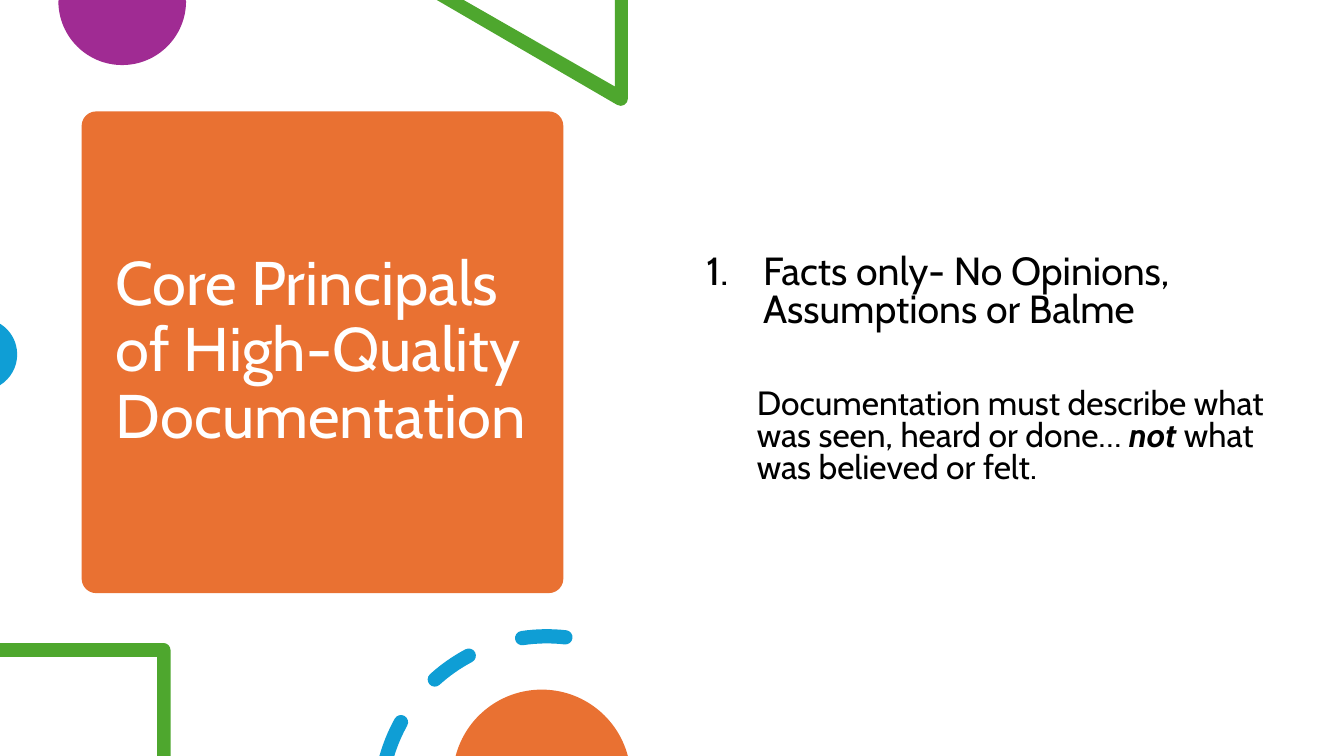
from dataclasses import dataclass
from math import ceil, cos, radians, sin, tan

from lxml import etree
from pptx import Presentation
from pptx.dml.color import RGBColor
from pptx.enum.shapes import MSO_SHAPE
from pptx.enum.text import MSO_ANCHOR
from pptx.oxml.ns import qn
from pptx.util import Inches, Pt

ROUNDED = MSO_SHAPE.ROUNDED_RECTANGLE
MIDDLE = MSO_ANCHOR.MIDDLE
TOP = MSO_ANCHOR.TOP
COLS, ROWS = 160, 90
CELL = Inches(7.5) / ROWS
RING = 65.1, 95.6
RADIUS, HALF = 19.85, 0.85


@dataclass(frozen=True)
class Theme:
    """Hold the colours and type sizes of the slide."""
    orange: str = "E97132"
    purple: str = "A02B93"
    green: str = "4EA72E"
    blue: str = "0F9ED5"
    white: str = "FFFFFF"
    black: str = "000000"
    font: str = "Cabin"
    title: int = 44
    point: int = 28
    detail: int = 24


THEME = Theme()


def grid(*cells):
    """Turn grid cells into slide lengths."""
    return [round(cell * CELL) for cell in cells]


def lines(*points):
    """List straight steps to the points."""
    return [(point,) for point in points]


def spot(x, y, radius, angle):
    """Find a point on a circle, in degrees counterclockwise from the right."""
    turn = radians(angle)
    return x + radius * cos(turn), y - radius * sin(turn)


def arc(x, y, radius, start, end):
    """List a start point and the curve steps of an arc."""
    count = ceil(abs(end - start) / 90)
    sweep = (end - start) / count
    pull = 4 / 3 * tan(radians(sweep) / 4) * radius
    steps = lines(spot(x, y, radius, start))
    for i in range(count):
        near, far = start + i * sweep, start + (i + 1) * sweep
        goal = spot(x, y, radius, far)
        steps.append((spot(*spot(x, y, radius, near), pull, near + 90),
                      spot(*goal, pull, far - 90), goal))
    return steps


def dash(start, end, cut=None):
    """Outline a dash of the ring, with a round or cut far end."""
    outer = arc(*RING, RADIUS + HALF, start, end)
    inner = arc(*RING, RADIUS - HALF, cut or end, start)
    tail = inner[:1]
    if cut is None:
        tail = arc(*spot(*RING, RADIUS, end), HALF, end, end + 180)[1:]
    head = arc(*spot(*RING, RADIUS, start), HALF, start + 180, start + 360)
    return outer + tail + inner[1:] + head[1:]


def paint(shape, color):
    """Give a shape a plain fill with no line or shadow."""
    shape.shadow.inherit = False
    shape.fill.solid()
    shape.fill.fore_color.rgb = RGBColor.from_string(color)
    shape.line.fill.background()


def bend(shape, steps):
    """Turn the straight steps that need it into curves."""
    marks = list(shape._element.iter(qn("a:lnTo")))
    for mark, step in zip(marks, steps):
        if len(step) == 3:
            curve = etree.Element(qn("a:cubicBezTo"))
            for point in step:
                x, y = grid(*point)
                etree.SubElement(curve, qn("a:pt"), x=str(x - shape.left),
                                 y=str(y - shape.top))
            mark.getparent().replace(mark, curve)


def draw(slide, color, *paths):
    """Draw closed paths as one shape."""
    pen = None
    for path in paths:
        first, *rest = [grid(*step[-1]) for step in path]
        if pen is None:
            pen = slide.shapes.build_freeform(*first, scale=1.0)
        else:
            pen.move_to(*first)
        pen.add_line_segments(rest, close=True)
    shape = pen.convert_to_shape()
    bend(shape, [step for path in paths for step in path[1:]])
    paint(shape, color)


def panel(slide, box, color, corner):
    """Add a rounded panel."""
    shape = slide.shapes.add_shape(ROUNDED, *grid(*box))
    shape.adjustments[0] = corner
    paint(shape, color)


def frame(slide, box, anchor):
    """Add a wrapping text box and return its text frame."""
    text = slide.shapes.add_textbox(*grid(*box)).text_frame
    text.word_wrap = True
    text.vertical_anchor = anchor
    return text


def write(para, runs, size, color, layout, indent=(0, 0), number=False):
    """Fill a paragraph with styled runs."""
    props = para._p.get_or_add_pPr()
    for name, value in zip(("marL", "indent"), grid(*indent)):
        props.set(name, str(value))
    if number:
        etree.SubElement(props, qn("a:buAutoNum"), type="arabicPeriod")
    for name, value in layout.items():
        setattr(para, name, value)
    for words, style in runs:
        run = para.add_run()
        run.text = words
        look = {"name": THEME.font, "size": Pt(size), **style}
        for name, value in look.items():
            setattr(run.font, name, value)
        run.font.color.rgb = RGBColor.from_string(color)


def decor(slide):
    """Draw the shapes around the title panel."""
    draw(slide, THEME.purple,
         lines((22.1, 0), (7, 0)) + arc(14.55, 0.15, 7.6, 180, 360))
    draw(slide, THEME.green,
         lines((52, 0)) + arc(73.9, 11.75, 0.85, 240, 360)
         + lines((74.75, 0), (73.2, 0), (73.2, 10.3), (55.2, 0)))
    draw(slide, THEME.blue, arc(-2.25, 42.2, 4.3, -58, 58))
    draw(slide, THEME.green,
         lines((0, 76.55)) + arc(19.45, 77.4, 0.85, 90, 0)
         + lines((20.3, 90), (18.7, 90), (18.7, 78.2), (0, 78.2)))
    spans = (151, 164.3, 162.86), (117.9, 132.2), (83.6, 98.5)
    draw(slide, THEME.blue, *[dash(*span) for span in spans])
    draw(slide, THEME.orange, arc(64.5, 92.7, 10.6, 14.7, 165.3))


def main():
    """Build and save the slide."""
    deck = Presentation()
    deck.slide_width, deck.slide_height = grid(COLS, ROWS)
    slide = deck.slides.add_slide(deck.slide_layouts[6])
    panel(slide, (9.72, 13.26, 57.35, 57.35), THEME.orange, 0.03)
    title = frame(slide, (12.6, 14.55, 51.7, 54.7), MIDDLE)
    write(title.paragraphs[0],
          [("Core Principals of High-Quality Documentation", {})],
          THEME.title, THEME.white, {"line_spacing": 0.9})
    decor(slide)
    body = frame(slide, (82.92, 29.82, 69, 31.7), TOP)
    write(body.paragraphs[0],
          [("Facts only- No Opinions, Assumptions or Balme", {})],
          THEME.point, THEME.black, {"line_spacing": 0.8}, (6.75, -6.75), True)
    write(body.add_paragraph(),
          [("Documentation must describe what was seen, heard or done… ", {}),
           ("not", {"bold": True, "italic": True}),
           (" what was believed or felt.", {})],
          THEME.detail, THEME.black,
          {"line_spacing": 0.8, "space_before": Pt(42)}, (6, 0))
    deck.save("out.pptx")


if __name__ == "__main__":
    main()
